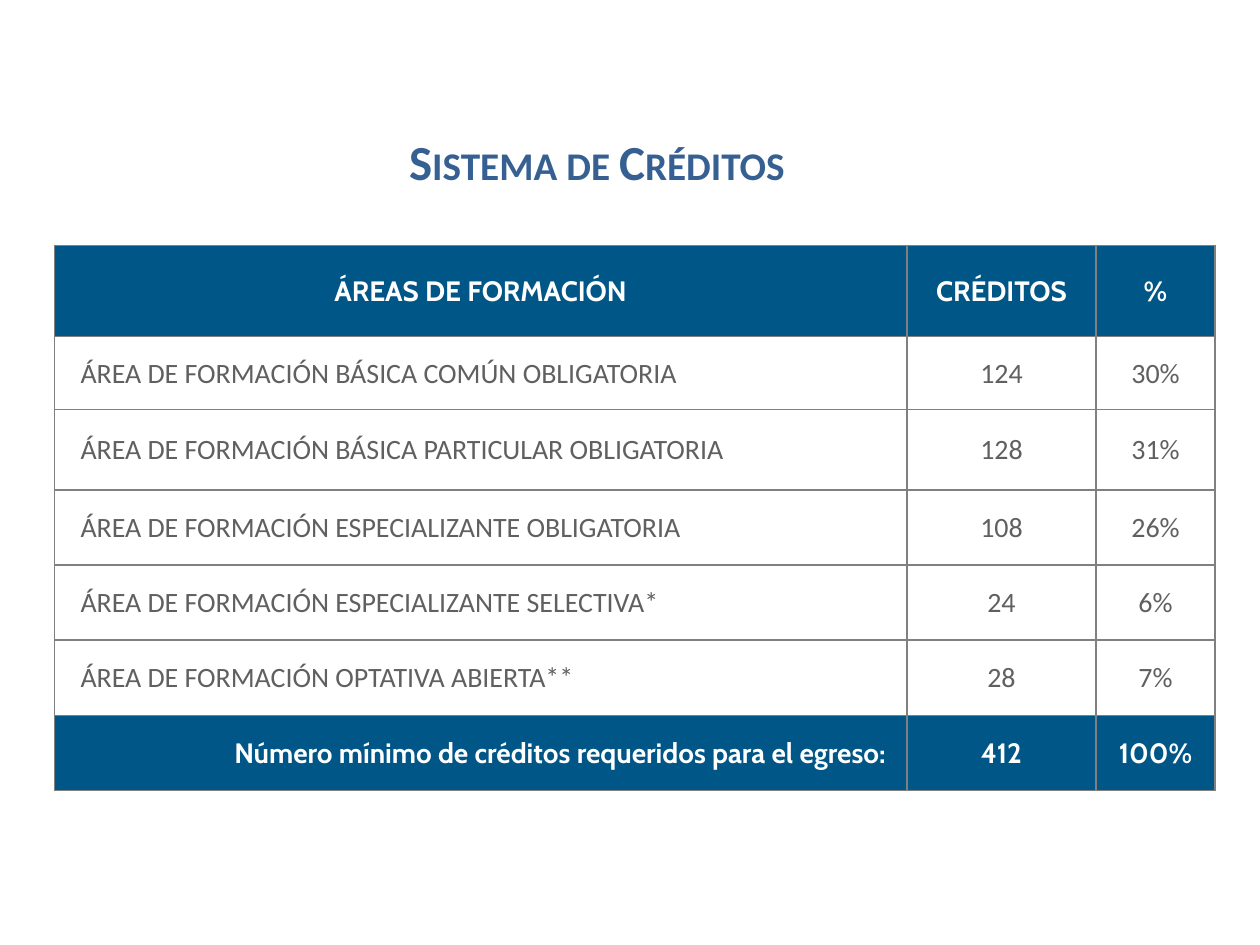
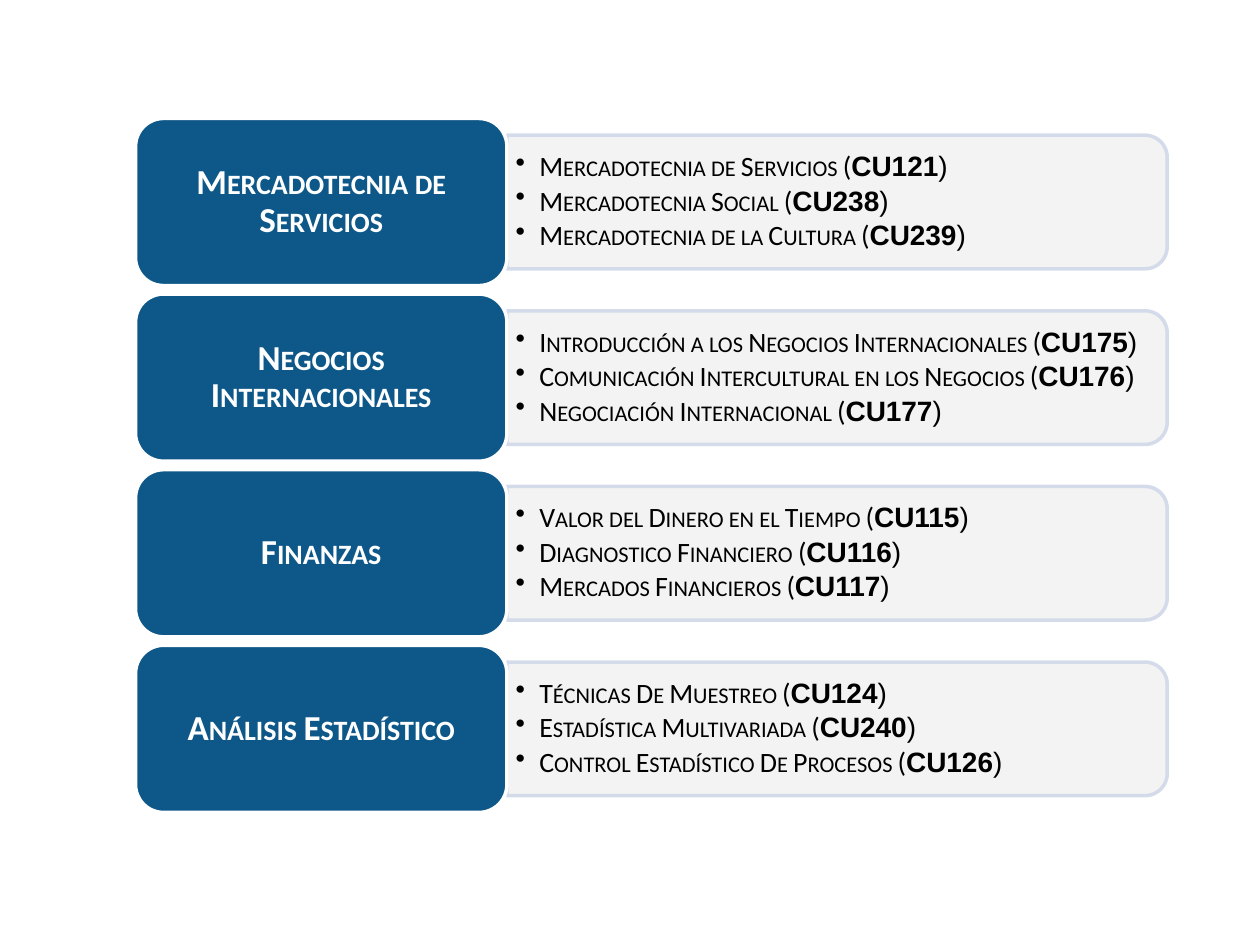
from pptx import Presentation
from pptx.dml.color import RGBColor
from pptx.enum.shapes import MSO_SHAPE
from pptx.enum.text import MSO_ANCHOR, PP_ALIGN
from pptx.oxml import parse_xml
from pptx.oxml.ns import nsdecls, qn
from pptx.oxml.xmlchemy import OxmlElement
from pptx.util import Pt

LEFT, CENTER, RIGHT = PP_ALIGN.LEFT, PP_ALIGN.CENTER, PP_ALIGN.RIGHT
MIDDLE = MSO_ANCHOR.MIDDLE
ROUND_RECT, ROUND_TWO = MSO_SHAPE.ROUNDED_RECTANGLE, MSO_SHAPE.ROUND_2_SAME_RECTANGLE

TITLE_BLUE, TABLE_BLUE, BOX_BLUE = "376092", "005686", "0E5889"
WHITE, BLACK, GREY_TEXT, GRID = "FFFFFF", "000000", "606060", "808080"
PANEL_FILL, PANEL_LINE = "F2F2F2", "D0D8E8"


def rgb(value):
    return RGBColor.from_string(value)


def add_text(p, text, size=16, font="Calibri", color=BLACK, bold=False, small_caps=False):
    r = p.add_run()
    r.text = text
    r.font.size, r.font.name, r.font.bold = Pt(size), font, bold
    r.font.color.rgb = rgb(color)
    if small_caps:
        r._r.get_or_add_rPr().set("cap", "small")


prs = Presentation()
prs.slide_width, prs.slide_height = Pt(720), Pt(540)

# Slide 1: title
s = prs.slides.add_slide(prs.slide_layouts[5])
title = s.shapes.title
title.left, title.top, title.width, title.height = Pt(208), Pt(71.3), Pt(266.4), Pt(41)
tf = title.text_frame
tf.vertical_anchor = MIDDLE
p = tf.paragraphs[0]
p.alignment = CENTER
add_text(p, "Sistema de Créditos", size=28, color=TITLE_BLUE, bold=True, small_caps=True)

# Slide 1: credits table
rows = [
    ("ÁREAS DE FORMACIÓN", "CRÉDITOS", "%"),
    ("ÁREA DE FORMACIÓN BÁSICA COMÚN OBLIGATORIA", "124", "30%"),
    ("ÁREA DE FORMACIÓN BÁSICA PARTICULAR OBLIGATORIA", "128", "31%"),
    ("ÁREA DE FORMACIÓN ESPECIALIZANTE OBLIGATORIA", "108", "26%"),
    ("ÁREA DE FORMACIÓN ESPECIALIZANTE SELECTIVA*", "24", "6%"),
    ("ÁREA DE FORMACIÓN OPTATIVA ABIERTA**", "28", "7%"),
    ("Número mínimo de créditos requeridos para el egreso:", "412", "100%"),
]
col_widths = [487.3, 108, 68]
row_heights = [52, 41.5, 46, 43, 43, 43, 43]
table = s.shapes.add_table(len(rows), len(col_widths), Pt(31), Pt(140.4),
                           Pt(sum(col_widths)), Pt(sum(row_heights))).table
table.first_row = table.horz_banding = False
for column, width in zip(table.columns, col_widths):
    column.width = Pt(width)
for row, height in zip(table.rows, row_heights):
    row.height = Pt(height)

last = len(rows) - 1
for i, row in enumerate(rows):
    dark = i in (0, last)
    for j, text in enumerate(row):
        cell = table.cell(i, j)
        cell.vertical_anchor = MIDDLE
        cell.margin_left = cell.margin_right = cell.margin_top = Pt(0.7)
        cell.margin_bottom = 0
        p = cell.text_frame.paragraphs[0]
        p.alignment = CENTER
        if j == 0 and i == last:
            p.alignment, cell.margin_right = RIGHT, Pt(12)
        elif j == 0 and i > 0:
            p.alignment, cell.margin_left = LEFT, Pt(15)
        add_text(p, text, font="Cabin" if dark else "Calibri",
                 color=WHITE if dark else GREY_TEXT, bold=dark)
        tcPr = cell._tc.get_or_add_tcPr()
        for side in ("lnL", "lnR", "lnT", "lnB"):
            tcPr.append(parse_xml(
                f'<a:{side} {nsdecls("a")} w="12700"><a:solidFill>'
                f'<a:srgbClr val="{GRID}"/></a:solidFill></a:{side}>'))
        if dark:
            cell.fill.solid()
            cell.fill.fore_color.rgb = rgb(TABLE_BLUE)
        else:
            cell.fill.background()

# Slide 2: specialities and their courses
s = prs.slides.add_slide(prs.slide_layouts[6])
specialities = [
    ("Mercadotecnia de Servicios", [
        ("Mercadotecnia de Servicios", "CU121"),
        ("Mercadotecnia Social", "CU238"),
        ("Mercadotecnia de la Cultura", "CU239")]),
    ("Negocios Internacionales", [
        ("Introducción a los Negocios Internacionales", "CU175"),
        ("Comunicación Intercultural en los Negocios", "CU176"),
        ("Negociación Internacional", "CU177")]),
    ("Finanzas", [
        ("Valor del Dinero en el Tiempo", "CU115"),
        ("Diagnostico Financiero", "CU116"),
        ("Mercados Financieros", "CU117")]),
    ("Análisis Estadístico", [
        ("Técnicas De Muestreo", "CU124"),
        ("Estadística Multivariada", "CU240"),
        ("Control Estadístico De Procesos", "CU126")]),
]
box_left, box_width, box_height = 77.5, 212.2, 95.5
first_top, pitch = 67.7, 100.35
panel_left, panel_width, panel_height = box_left + box_width, 377.3, 76.4

for i, (name, courses) in enumerate(specialities):
    top = first_top + i * pitch
    middle = top + box_height / 2

    # Panel, turned a quarter so that its round corners face right
    panel = s.shapes.add_shape(
        ROUND_TWO, Pt(panel_left + (panel_width - panel_height) / 2),
        Pt(middle - panel_width / 2), Pt(panel_height), Pt(panel_width))
    panel.rotation = 90
    panel.shadow.inherit = False
    panel.fill.solid()
    panel.fill.fore_color.rgb = rgb(PANEL_FILL)
    panel.line.color.rgb = rgb(PANEL_LINE)
    panel.line.width = Pt(2)
    for color in panel._element.spPr.iter(qn("a:srgbClr")):
        alpha = OxmlElement("a:alpha")
        alpha.set("val", "90000")
        color.append(alpha)

    # Course list
    tf = s.shapes.add_textbox(Pt(panel_left), Pt(middle - 34.5), Pt(373.6), Pt(69)).text_frame
    tf.word_wrap = True
    tf.vertical_anchor = MIDDLE
    tf.margin_left = tf.margin_right = Pt(5)
    tf.margin_top = tf.margin_bottom = Pt(2.4)
    for k, (course, code) in enumerate(courses):
        p = tf.add_paragraph() if k else tf.paragraphs[0]
        p.line_spacing, p.space_after = 0.9, Pt(2.4)
        pPr = p._p.get_or_add_pPr()
        pPr.set("marL", str(Pt(13.5)))
        pPr.set("indent", str(-Pt(13.5)))
        bullet = OxmlElement("a:buChar")
        bullet.set("char", "•")
        pPr.append(bullet)
        add_text(p, course + " ", small_caps=True)
        add_text(p, "(")
        add_text(p, code, font="Arial", bold=True)
        add_text(p, ")", font="Arial")

    # Speciality box
    box = s.shapes.add_shape(ROUND_RECT, Pt(box_left), Pt(top), Pt(box_width), Pt(box_height))
    box.shadow.inherit = False
    box.fill.solid()
    box.fill.fore_color.rgb = rgb(BOX_BLUE)
    box.line.color.rgb = rgb(WHITE)
    box.line.width = Pt(2)
    tf = box.text_frame
    tf.word_wrap = True
    tf.vertical_anchor = MIDDLE
    p = tf.paragraphs[0]
    p.alignment, p.line_spacing = CENTER, 0.9
    add_text(p, name, size=20, color=WHITE, bold=True, small_caps=True)

prs.save("out.pptx")
